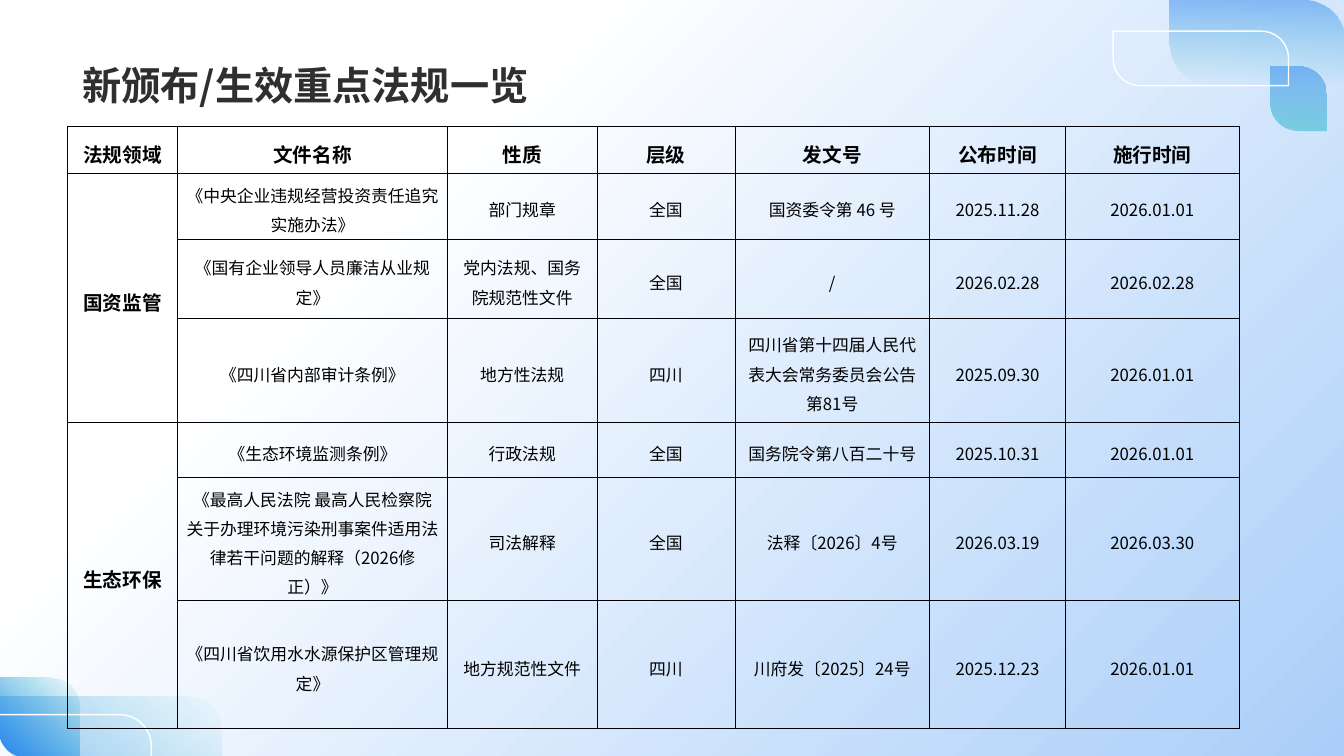
from math import cos, pi, sin

from lxml import etree
from pptx import Presentation
from pptx.dml.color import RGBColor
from pptx.enum.shapes import MSO_SHAPE
from pptx.enum.text import MSO_ANCHOR, PP_ALIGN
from pptx.oxml.ns import qn
from pptx.util import Inches, Pt

LEAF = MSO_SHAPE.ROUND_2_DIAG_RECTANGLE
MIDDLE, BOTTOM = MSO_ANCHOR.MIDDLE, MSO_ANCHOR.BOTTOM
CENTER = PP_ALIGN.CENTER
FONT = "Noto Sans CJK SC"
COLORS = {
    "sky": "AACEF9",
    "white": "FFFFFF",
    "teal": "24B6C7",
    "blue": "2A85F0",
    "title": "2F2F2F",
    "text": "000000",
    "border": "000008",
}

COLUMN_WIDTHS = [1.09, 2.68, 1.48, 1.37, 1.93, 1.35, 1.72]
ROW_HEIGHTS = [0.47, 0.65, 0.79, 1.03, 0.55, 1.22, 1.27]
HEADINGS = ["法规领域", "文件名称", "性质", "层级", "发文号", "公布时间", "施行时间"]
REGULATIONS = {
    "国资监管": [
        ["《中央企业违规经营投资责任追究实施办法》", "部门规章", "全国",
         "国资委令第 46 号", "2025.11.28", "2026.01.01"],
        ["《国有企业领导人员廉洁从业规定》", "党内法规、国务院规范性文件", "全国",
         "/", "2026.02.28", "2026.02.28"],
        ["《四川省内部审计条例》", "地方性法规", "四川",
         "四川省第十四届人民代表大会常务委员会公告第81号", "2025.09.30", "2026.01.01"],
    ],
    "生态环保": [
        ["《生态环境监测条例》", "行政法规", "全国",
         "国务院令第八百二十号", "2025.10.31", "2026.01.01"],
        ["《最高人民法院 最高人民检察院关于办理环境污染刑事案件适用法律若干问题的解释（2026修正）》",
         "司法解释", "全国", "法释〔2026〕4号", "2026.03.19", "2026.03.30"],
        ["《四川省饮用水水源保护区管理规定》", "地方规范性文件", "四川",
         "川府发〔2025〕24号", "2025.12.23", "2026.01.01"],
    ],
}


def rgb(name):
    return RGBColor.from_string(COLORS[name])


def set_gradient(fill, angle, stops):
    fill.gradient()
    fill.gradient_angle = 360 - angle
    for stop, (position, color, opacity) in zip(fill.gradient_stops, stops):
        stop.position = position
        stop.color.rgb = rgb(color)
        if opacity < 100:
            tint = stop._gs.find(qn("a:srgbClr"))
            etree.SubElement(tint, qn("a:alpha"), val=str(opacity * 1000))


def set_outline(shape):
    shape.shadow.inherit = False
    shape.fill.background()
    shape.line.color.rgb = rgb("white")
    shape.line.width = Pt(1)


def add_leaf(slide, box, rounding=0.5):
    leaf = slide.shapes.add_shape(LEAF, *map(Inches, box))
    leaf.adjustments[0] = 0
    leaf.adjustments[1] = rounding
    leaf.shadow.inherit = False
    leaf.line.fill.background()
    return leaf


def add_tinted_leaf(slide, box, angle, opacities, rounding=0.5):
    leaf = add_leaf(slide, box, rounding)
    start, end = opacities
    set_gradient(leaf.fill, angle, [(0, "teal", start), (1, "blue", end)])


def add_corner_curve(slide):
    center_x, center_y, radius, steps = 1.19, 7.4, 0.31, 24
    angles = [pi / 2 * (1 - step / steps) for step in range(steps + 1)]
    points = [(center_x + radius * cos(a), center_y - radius * sin(a)) for a in angles]
    points.append((center_x + radius, 7.51))
    builder = slide.shapes.build_freeform(
        Inches(-0.01), Inches(center_y - radius), scale=1.0)
    builder.add_line_segments(
        [(Inches(x), Inches(y)) for x, y in points], close=False)
    set_outline(builder.convert_to_shape())


def style_paragraph(paragraph, size, color, bold):
    font = paragraph.font
    font.size = Pt(size)
    font.bold = bold
    font.color.rgb = rgb(color)
    font.name = FONT
    etree.SubElement(font._element, qn("a:ea"), typeface=FONT)


def add_title(slide, text):
    title = slide.shapes.add_textbox(
        Inches(0.72), Inches(0.14), Inches(11.88), Inches(0.98))
    frame = title.text_frame
    frame.word_wrap = True
    frame.vertical_anchor = BOTTOM
    frame.text = text
    style_paragraph(frame.paragraphs[0], 28, "title", True)


def set_borders(cell):
    properties = cell._tc.get_or_add_tcPr()
    for side in ("lnL", "lnR", "lnT", "lnB"):
        line = etree.SubElement(properties, qn(f"a:{side}"), w=str(Pt(0.5)))
        fill = etree.SubElement(line, qn("a:solidFill"))
        etree.SubElement(fill, qn("a:srgbClr"), val=COLORS["border"])


def fill_cell(cell, text, emphasized):
    set_borders(cell)
    cell.fill.background()
    cell.vertical_anchor = MIDDLE
    cell.margin_left = cell.margin_right = Inches(0.08)
    cell.margin_top = Inches(0.04)
    cell.margin_bottom = Inches(0.02)
    cell.text = text
    paragraph = cell.text_frame.paragraphs[0]
    paragraph.alignment = CENTER
    paragraph.line_spacing = 1.2
    style_paragraph(paragraph, 14 if emphasized else 12, "text", emphasized)


def add_regulation_table(slide):
    table = slide.shapes.add_table(
        len(ROW_HEIGHTS), len(COLUMN_WIDTHS), Inches(0.67), Inches(1.25),
        Inches(sum(COLUMN_WIDTHS)), Inches(sum(ROW_HEIGHTS))).table
    table.first_row = table.horz_banding = False
    for column, width in zip(table.columns, COLUMN_WIDTHS):
        column.width = Inches(width)
    for row, height in zip(table.rows, ROW_HEIGHTS):
        row.height = Inches(height)

    rows = [HEADINGS]
    for field, regulations in REGULATIONS.items():
        first = len(rows)
        for index, regulation in enumerate(regulations):
            rows.append(["" if index else field] + regulation)
        table.cell(first, 0).merge(table.cell(len(rows) - 1, 0))
    for r, row in enumerate(rows):
        for c, text in enumerate(row):
            fill_cell(table.cell(r, c), text, r == 0 or c == 0)


def main():
    prs = Presentation()
    prs.slide_width, prs.slide_height = Inches(13.33), Inches(7.5)
    slide = prs.slides.add_slide(prs.slide_layouts[6])
    set_gradient(slide.background.fill, 225, [(0, "sky", 100), (0.72, "white", 100)])

    add_tinted_leaf(slide, (-0.01, 6.72, 0.8, 0.8), 135, (0, 100), 0.357)
    add_tinted_leaf(slide, (-0.01, 6.91, 2.21, 0.62), 135, (0, 50))
    add_corner_curve(slide)
    add_tinted_leaf(slide, (11.6, 0, 1.74, 0.85), 270, (0, 50))
    add_tinted_leaf(slide, (12.6, 0.66, 0.56, 0.64), 270, (50, 50))
    set_outline(add_leaf(slide, (11.04, 0.31, 1.74, 0.54)))

    add_title(slide, "新颁布/生效重点法规一览")
    add_regulation_table(slide)
    prs.save("out.pptx")


if __name__ == "__main__":
    main()
